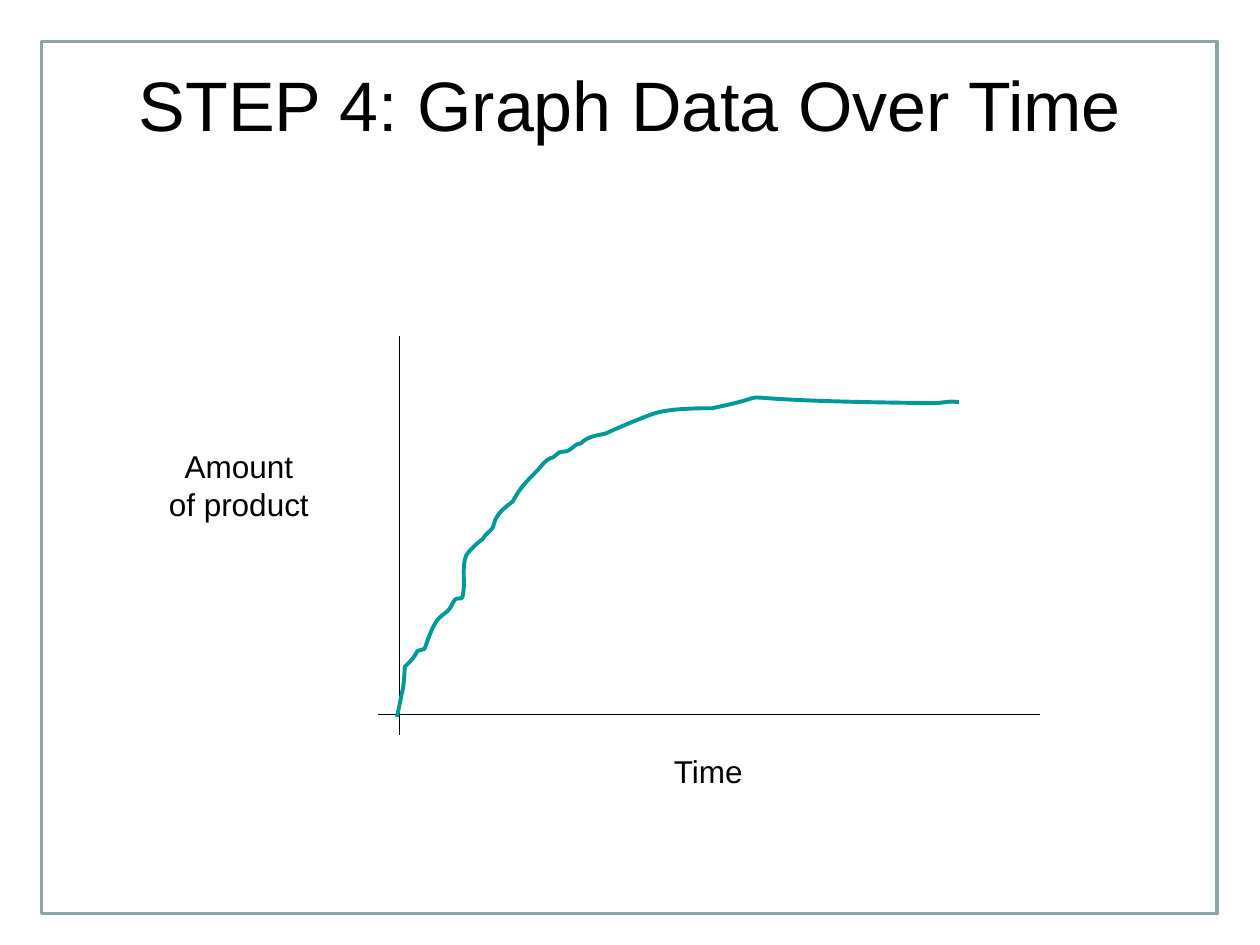
import itertools

import pptx
import pptx.util
import pptx.dml.color
import pptx.enum.shapes
import pptx.enum.text
import pptx.oxml.ns
from lxml import etree

Inches, Pt, qn = pptx.util.Inches, pptx.util.Pt, pptx.oxml.ns.qn
ALIGN = pptx.enum.text.PP_ALIGN
FONT = "Arial"
HUE = {"text": "000000", "axis": "000000", "curve": "009999", "frame": "8AA6A8"}

# Product curve in hundredths of an inch right of and above the axis crossing:
# a start point, then two handles and an end point for each Bezier piece.
START = (-2, -2)
CURVE = [
    ((0, 6), (1, 13), (3, 21)),
    ((6, 47), (1, 32), (11, 45)),
    ((17, 53), (11, 49), (20, 52)),
    ((23, 60), (26, 70), (31, 76)),
    ((34, 79), (38, 81), (40, 84)),
    ((42, 86), (42, 89), (44, 91)),
    ((46, 93), (49, 91), (50, 93)),
    ((53, 103), (49, 116), (53, 126)),
    ((55, 130), (63, 137), (66, 139)),
    ((68, 143), (72, 145), (74, 148)),
    ((75, 150), (75, 152), (76, 154)),
    ((79, 161), (85, 165), (90, 169)),
    ((96, 180), (100, 184), (109, 193)),
    ((114, 198), (115, 202), (122, 204)),
    ((124, 205), (125, 207), (127, 208)),
    ((130, 209), (133, 208), (135, 210)),
    ((136, 210), (137, 212), (139, 213)),
    ((140, 214), (142, 215), (144, 215)),
    ((150, 221), (156, 221), (164, 223)),
    ((170, 226), (196, 237), (203, 239)),
    ((215, 243), (241, 243), (248, 243)),
    ((322, 258), (217, 249), (427, 247)),
    ((442, 249), (436, 248), (444, 248)),
]


def color(name):
    return pptx.dml.color.RGBColor.from_string(HUE[name])


def stroke(shape, name, width):
    shape.line.color.rgb = color(name)
    shape.line.width = Pt(width)


def write(frame, lines, size, align):
    for i, line in enumerate(lines):
        para = frame.add_paragraph() if i else frame.paragraphs[0]
        para.alignment = align
        run = para.add_run()
        run.text = line
        run.font.name = FONT
        run.font.size = Pt(size)
        run.font.color.rgb = color("text")


def add_title(slide, box, text):
    title = slide.shapes.title
    title.left, title.top, title.width, title.height = map(Inches, box)
    title.text_frame.vertical_anchor = pptx.enum.text.MSO_ANCHOR.MIDDLE
    write(title.text_frame, [text], 40, ALIGN.CENTER)


def add_label(slide, box, lines, align, wrap):
    frame = slide.shapes.add_textbox(*map(Inches, box)).text_frame
    frame.word_wrap = wrap
    frame.auto_size = pptx.enum.text.MSO_AUTO_SIZE.SHAPE_TO_FIT_TEXT
    write(frame, lines, 18, align)


def add_axis(slide, *ends):
    kind = pptx.enum.shapes.MSO_CONNECTOR.STRAIGHT
    axis = slide.shapes.add_connector(kind, *map(Inches, ends))
    stroke(axis, "axis", 0.75)
    etree.SubElement(axis._element.spPr, qn("a:effectLst"))


def bend(shape):
    """Turn each three line segments into one cubic Bezier piece."""
    lines = list(shape._element.iter(qn("a:lnTo")))
    for one, two, end in zip(lines[::3], lines[1::3], lines[2::3]):
        piece = etree.Element(qn("a:cubicBezTo"))
        one.addprevious(piece)
        for line in (one, two, end):
            piece.append(line[0])
            line.getparent().remove(line)


def add_curve(slide, x, y):
    """Draw the product curve from the axis crossing at x, y."""
    points = [(Inches(x + dx / 100), Inches(y - dy / 100))
              for dx, dy in itertools.chain([START], *CURVE)]
    pen = slide.shapes.build_freeform(*points[0])
    pen.add_line_segments(points[1:], close=False)
    curve = pen.convert_to_shape()
    bend(curve)
    curve.shadow.inherit = False
    curve.fill.background()
    stroke(curve, "curve", 2.25)


def add_graph(slide, box):
    """Draw the axes, labels and curve; each axis overshoots the crossing."""
    left, top, width, height = box
    x, y = left + 0.17, top + height - 0.16
    add_axis(slide, x, top, x, top + height)
    add_axis(slide, left, y, left + width, y)
    add_label(slide, (left - 2.08, top + 0.83, 1.95, 0.7),
              ["Amount", "of product"], ALIGN.CENTER, True)
    add_label(slide, (left + 2.25, y + 0.25, 0.83, 0.7),
              ["Time"], ALIGN.LEFT, False)
    add_curve(slide, x, y)


def add_frame(slide, box):
    kind = pptx.enum.shapes.MSO_SHAPE.RECTANGLE
    frame = slide.shapes.add_shape(kind, *map(Inches, box))
    frame.shadow.inherit = False
    frame.fill.background()
    stroke(frame, "frame", 2)


def main():
    deck = pptx.Presentation()
    deck.slide_width, deck.slide_height = Inches(10), Inches(7.5)
    slide = deck.slides.add_slide(deck.slide_layouts.get_by_name("Title Only"))
    add_title(slide, (0.5, 0.3, 9, 1.04), "STEP 4: Graph Data Over Time")
    add_graph(slide, (3, 2.67, 5.25, 3.16))
    add_frame(slide, (0.33, 0.33, 9.33, 6.92))
    deck.save("out.pptx")


if __name__ == "__main__":
    main()
